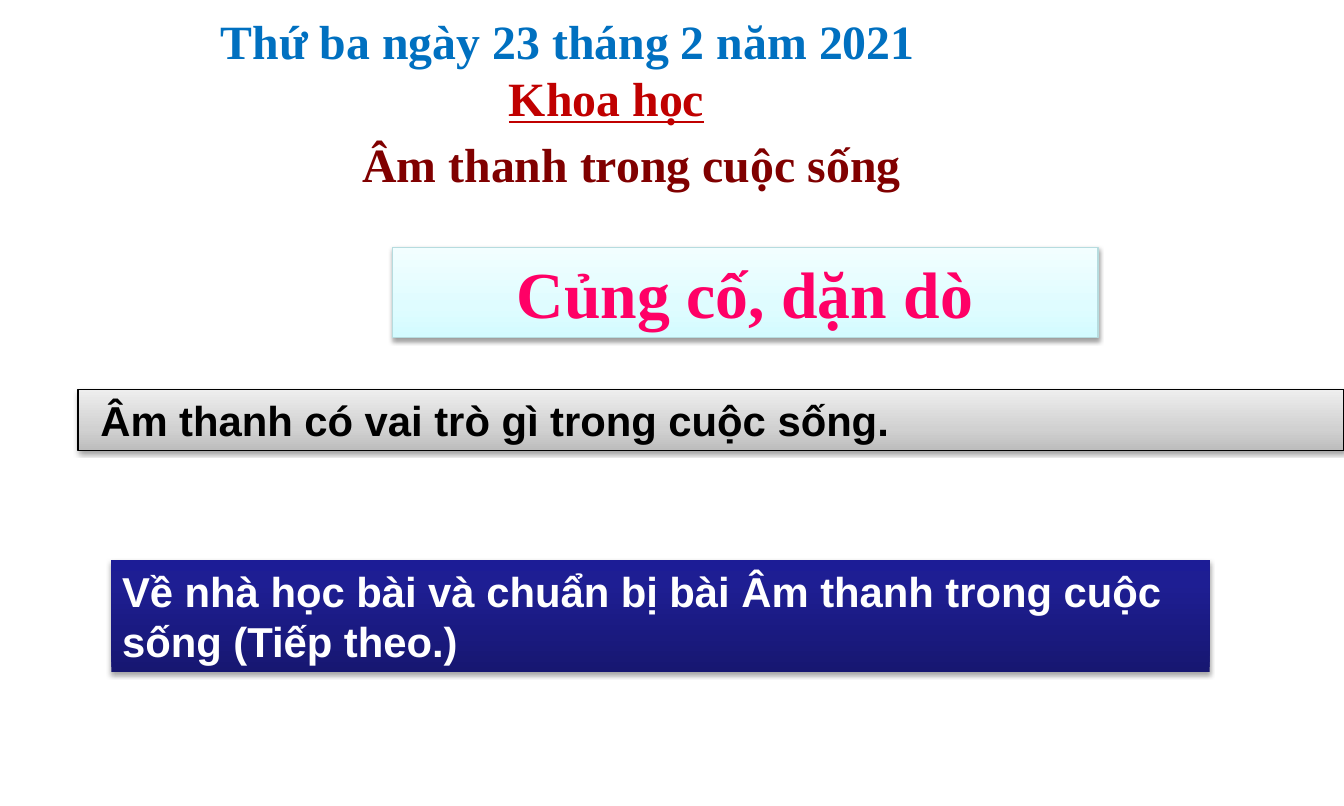
from copy import deepcopy
from dataclasses import dataclass

from lxml.etree import SubElement
from pptx import Presentation
from pptx.dml.color import RGBColor
from pptx.enum.shapes import MSO_SHAPE
from pptx.enum.text import MSO_ANCHOR, PP_ALIGN
from pptx.oxml.ns import qn
from pptx.util import Inches, Pt


@dataclass(frozen=True)
class Theme:
    serif: str = "Times New Roman"
    sans: str = "Arial"
    heading_size: int = 32
    banner_size: int = 44
    body_size: int = 28
    date: str = "0070C0"
    subject: str = "C00000"
    lesson: str = "800000"
    banner_text: str = "FF0066"
    black: str = "000000"
    white: str = "FFFFFF"
    banner_line: str = "B6DCDF"
    # Gradient stops run from the bottom edge up: (position in percent, colour)
    banner_fill: tuple = ((0, "D3FBFF"), (35, "DFFCFF"), (100, "F2FEFF"))
    question_fill: tuple = ((0, "BDBDBD"), (35, "D1D1D1"), (100, "EEEEEE"))
    homework_fill: tuple = ((0, "171771"), (80, "1E1E93"), (100, "1C1C96"))


class Page:
    """One slide; places are percentages of its width and height."""

    def __init__(self, deck, theme):
        self.deck, self.theme = deck, theme
        self.slide = deck.slides.add_slide(deck.slide_layouts[6])

    def place(self, left, top, width, height):
        across, down = self.deck.slide_width, self.deck.slide_height
        return [round(share * side / 100) for share, side in
                zip((left, top, width, height), (across, down, across, down))]

    def style_line(self, para, text, font, size, color, align=PP_ALIGN.LEFT,
                   indent=0, before=0, underline=None):
        para.text = text
        para.alignment = align
        para.space_before = Pt(before)
        para.font.name, para.font.size = font, Pt(size)
        para.font.bold, para.font.underline = True, underline
        para.font.color.rgb = RGBColor.from_string(color)
        if indent:
            para._p.get_or_add_pPr().set("marL", str(Inches(indent)))

    def text(self, area, *lines):
        frame = self.slide.shapes.add_textbox(*self.place(*area)).text_frame
        frame.word_wrap = True
        for number, line in enumerate(lines):
            para = frame.add_paragraph() if number else frame.paragraphs[0]
            self.style_line(para, **line)

    def panel(self, area, stops, line_color=None, opacity=38, distance=1.6, **line):
        box = self.slide.shapes.add_shape(MSO_SHAPE.RECTANGLE, *self.place(*area))
        self.gradient(box, stops)
        if line_color:
            box.line.color.rgb = RGBColor.from_string(line_color)
            box.line.width = Pt(0.75)
        else:
            box.line.fill.background()
        self.shadow(box, opacity, distance)
        frame = box.text_frame
        frame.word_wrap = True
        frame.vertical_anchor = MSO_ANCHOR.TOP
        self.style_line(frame.paragraphs[0], **line)

    def gradient(self, box, stops):
        box.fill.gradient()
        box.fill.gradient_angle = 90
        stop_list = box.element.spPr.find(".//" + qn("a:gsLst"))
        stop_list.insert(1, deepcopy(stop_list[0]))
        for stop, (position, color) in zip(box.fill.gradient_stops, stops):
            stop.position = position / 100
            stop.color.rgb = RGBColor.from_string(color)

    def shadow(self, box, opacity, distance):
        box.shadow.inherit = False
        effects = box.element.spPr.find(qn("a:effectLst"))
        outer = SubElement(effects, qn("a:outerShdw"), blurRad=str(Pt(3.1)),
                           dist=str(Pt(distance)), dir="5400000", rotWithShape="0")
        color = SubElement(outer, qn("a:srgbClr"), val=self.theme.black)
        SubElement(color, qn("a:alpha"), val=str(opacity * 1000))


def main():
    deck = Presentation()
    deck.slide_width, deck.slide_height = Inches(12.5), Inches(7.5)
    theme = Theme()
    page = Page(deck, theme)
    heading = dict(font=theme.serif, size=theme.heading_size)
    body = dict(font=theme.sans, size=theme.body_size)

    # Banner, review question and homework
    page.panel((29.2, 30.7, 52.5, 11.2), theme.banner_fill, theme.banner_line,
               text="Củng cố, dặn dò", font=theme.serif, size=theme.banner_size,
               color=theme.banner_text, align=PP_ALIGN.CENTER)
    page.panel((5.8, 48.3, 94.2, 7.6), theme.question_fill, theme.black,
               text="Âm thanh có vai trò gì trong cuộc sống.",
               color=theme.black, indent=0.11, **body)
    page.panel((8.3, 69.5, 81.7, 13.9), theme.homework_fill,
               opacity=35, distance=1.8,
               text="Về nhà học bài và chuẩn bị bài Âm thanh trong cuộc sống (Tiếp theo.)",
               color=theme.white, **body)

    # Date, subject and lesson title
    page.text((8.6, 0.8, 90, 22.9),
              dict(text="Thứ ba ngày 23 tháng 2 năm 2021", color=theme.date,
                   indent=0.88, **heading),
              dict(text="Khoa học", color=theme.subject, indent=3.56,
                   underline=True, **heading))
    page.text((2, 16.1, 90, 18.9),
              dict(text="Âm thanh trong cuộc sống", color=theme.lesson,
                   align=PP_ALIGN.CENTER, before=6.4, **heading))

    deck.save("out.pptx")


if __name__ == "__main__":
    main()
